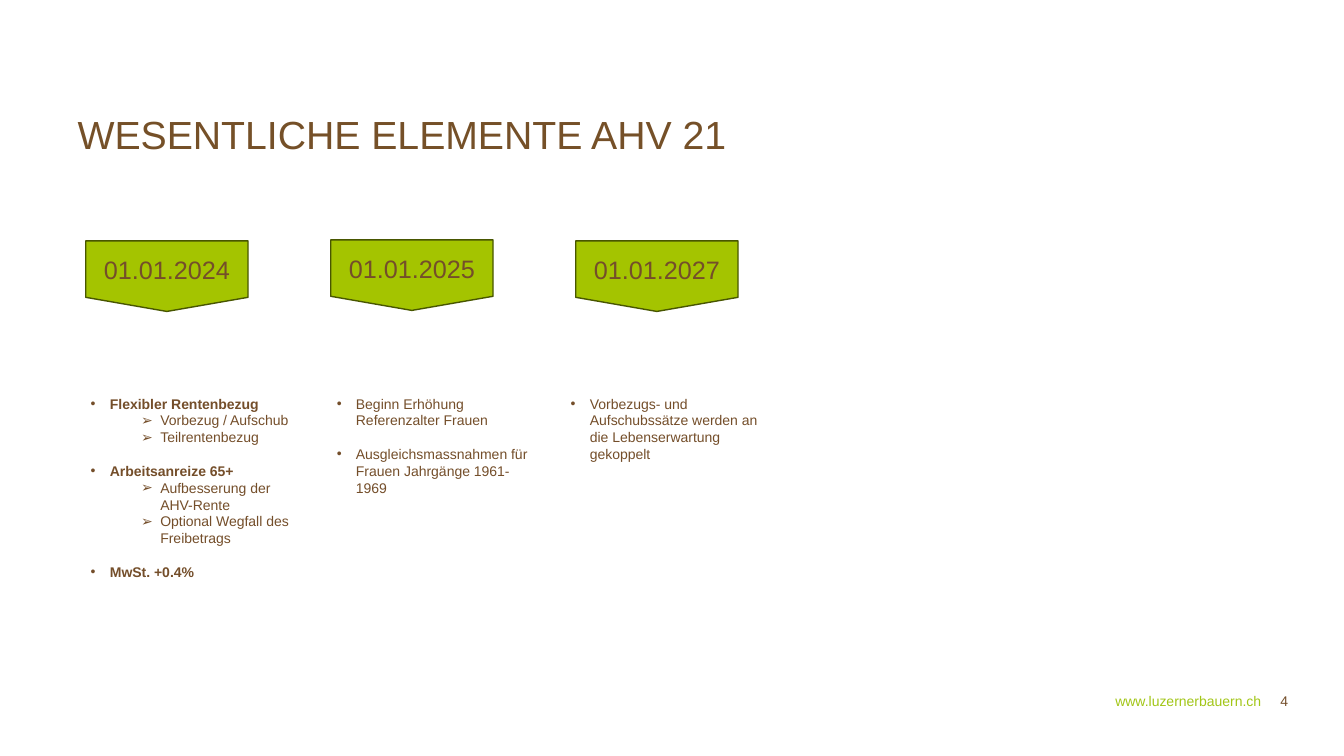
from lxml.etree import SubElement
from pptx import Presentation
from pptx.dml.color import RGBColor
from pptx.enum.shapes import MSO_SHAPE
from pptx.enum.text import MSO_ANCHOR, MSO_AUTO_SIZE, PP_ALIGN
from pptx.oxml.ns import qn
from pptx.util import Inches, Pt

BROWN = RGBColor(0x74, 0x4E, 0x2A)
TITLE_BROWN = RGBColor(0x75, 0x50, 0x28)
GREEN = RGBColor(0xA4, 0xC4, 0x00)
DARK_GREEN = RGBColor(0x48, 0x56, 0x00)
LINK_GREEN = RGBColor(0xA2, 0xC6, 0x17)

BULLETS = ("•", "➢")
TEXT_INDENTS = (0.19, 0.69)
HANGING = 0.19

MILESTONES = [
    ("01.01.2024", 0.85, 2.39),
    ("01.01.2025", 3.28, 2.38),
    ("01.01.2027", 5.71, 2.39),
]
MEASURES = [
    (0.8, 1.95, [
        (0, "Flexibler Rentenbezug", True),
        (1, "Vorbezug / Aufschub", False),
        (1, "Teilrentenbezug", False),
        (0, "Arbeitsanreize 65+", True),
        (1, "Aufbesserung der AHV-Rente", False),
        (1, "Optional Wegfall des Freibetrags", False),
        (0, "MwSt. +0.4%", True),
    ]),
    (3.24, 0.94, [
        (0, "Beginn Erhöhung Referenzalter Frauen", False),
        (0, "Ausgleichsmassnahmen für Frauen Jahrgänge 1961-1969", False),
    ]),
    (5.56, 0.94, [
        (0, "Vorbezugs- und Aufschubssätze werden an "
            "die Lebenserwartung gekoppelt", False),
    ]),
]


def place(shape, left, top, width, height):
    """Move and size a shape, in inches."""
    shape.left, shape.top = Inches(left), Inches(top)
    shape.width, shape.height = Inches(width), Inches(height)


def format_run(run, size, color, bold=False):
    """Apply the slide's font to a run."""
    run.font.name = "Arial"
    run.font.size = Pt(size)
    run.font.bold = bold
    run.font.color.rgb = color


def fill_title(title, text):
    """Write and format the slide title."""
    place(title, 0.67, 1.01, 8.87, 0.63)
    frame = title.text_frame
    frame.text = text
    frame.auto_size = MSO_AUTO_SIZE.NONE
    frame.vertical_anchor = MSO_ANCHOR.MIDDLE
    frame.paragraphs[0].alignment = PP_ALIGN.LEFT
    format_run(frame.paragraphs[0].runs[0], 28, TITLE_BROWN)


def add_milestone(slide, date, left, top):
    """Add a green date marker pointing down."""
    marker = slide.shapes.add_shape(
        MSO_SHAPE.FLOWCHART_OFFPAGE_CONNECTOR,
        Inches(left), Inches(top), Inches(1.61), Inches(0.7))
    marker.shadow.inherit = False
    marker.fill.solid()
    marker.fill.fore_color.rgb = GREEN
    marker.line.color.rgb = DARK_GREEN
    marker.line.width = Pt(1)
    frame = marker.text_frame
    frame.text = date
    frame.vertical_anchor = MSO_ANCHOR.MIDDLE
    frame.paragraphs[0].alignment = PP_ALIGN.CENTER
    format_run(frame.paragraphs[0].runs[0], 18, BROWN)


def set_bullet(paragraph, level):
    """Give a paragraph the bullet and hanging indent of its level."""
    paragraph.level = level
    properties = paragraph._p.get_or_add_pPr()
    properties.set("marL", str(Inches(TEXT_INDENTS[level])))
    properties.set("indent", str(-Inches(HANGING)))
    SubElement(properties, qn("a:buFont")).set("typeface", "Arial")
    SubElement(properties, qn("a:buChar")).set("char", BULLETS[level])


def fill_list(placeholder, left, height, items):
    """Write a bulleted list of measures into a body placeholder."""
    place(placeholder, left, 3.87, 2.21, height)
    frame = placeholder.text_frame
    frame.auto_size = MSO_AUTO_SIZE.NONE
    frame.vertical_anchor = MSO_ANCHOR.TOP
    for index, (level, text, bold) in enumerate(items):
        paragraph = frame.add_paragraph() if index else frame.paragraphs[0]
        paragraph.text = text
        paragraph.line_spacing = 1.0
        paragraph.space_before = Pt(12 if index and level == 0 else 0)
        paragraph.space_after = Pt(0)
        set_bullet(paragraph, level)
        format_run(paragraph.runs[0], 10, BROWN, bold)


def add_footer(slide, address, number):
    """Add the web address and page number on tab stops."""
    box = slide.shapes.add_textbox(
        Inches(9.88), Inches(6.75), Inches(3), Inches(0.4))
    frame = box.text_frame
    frame.word_wrap = True
    frame.vertical_anchor = MSO_ANCHOR.MIDDLE
    paragraph = frame.paragraphs[0]
    tabs = SubElement(paragraph._p.get_or_add_pPr(), qn("a:tabLst"))
    for position, alignment in ((2.53, "r"), (2.72, "l")):
        tab = SubElement(tabs, qn("a:tab"))
        tab.set("pos", str(Inches(position)))
        tab.set("algn", alignment)
    for text, color in ((address, LINK_GREEN), (number, BROWN)):
        run = paragraph.add_run()
        run.text = "\t" + text
        format_run(run, 10, color)


def main():
    """Build the slide and save it."""
    presentation = Presentation()
    presentation.slide_width = Inches(13.33)
    presentation.slide_height = Inches(7.5)
    layout = presentation.slide_layouts.get_by_name("Comparison")
    slide = presentation.slides.add_slide(layout)
    title, *bodies = slide.placeholders
    fill_title(title, "WESENTLICHE ELEMENTE AHV 21")
    for milestone in MILESTONES:
        add_milestone(slide, *milestone)
    for body, measures in zip(bodies, MEASURES):
        fill_list(body, *measures)
    for unused in bodies[len(MEASURES):]:
        unused.element.getparent().remove(unused.element)
    add_footer(slide, "www.luzernerbauern.ch", "4")
    presentation.save("out.pptx")


if __name__ == "__main__":
    main()
